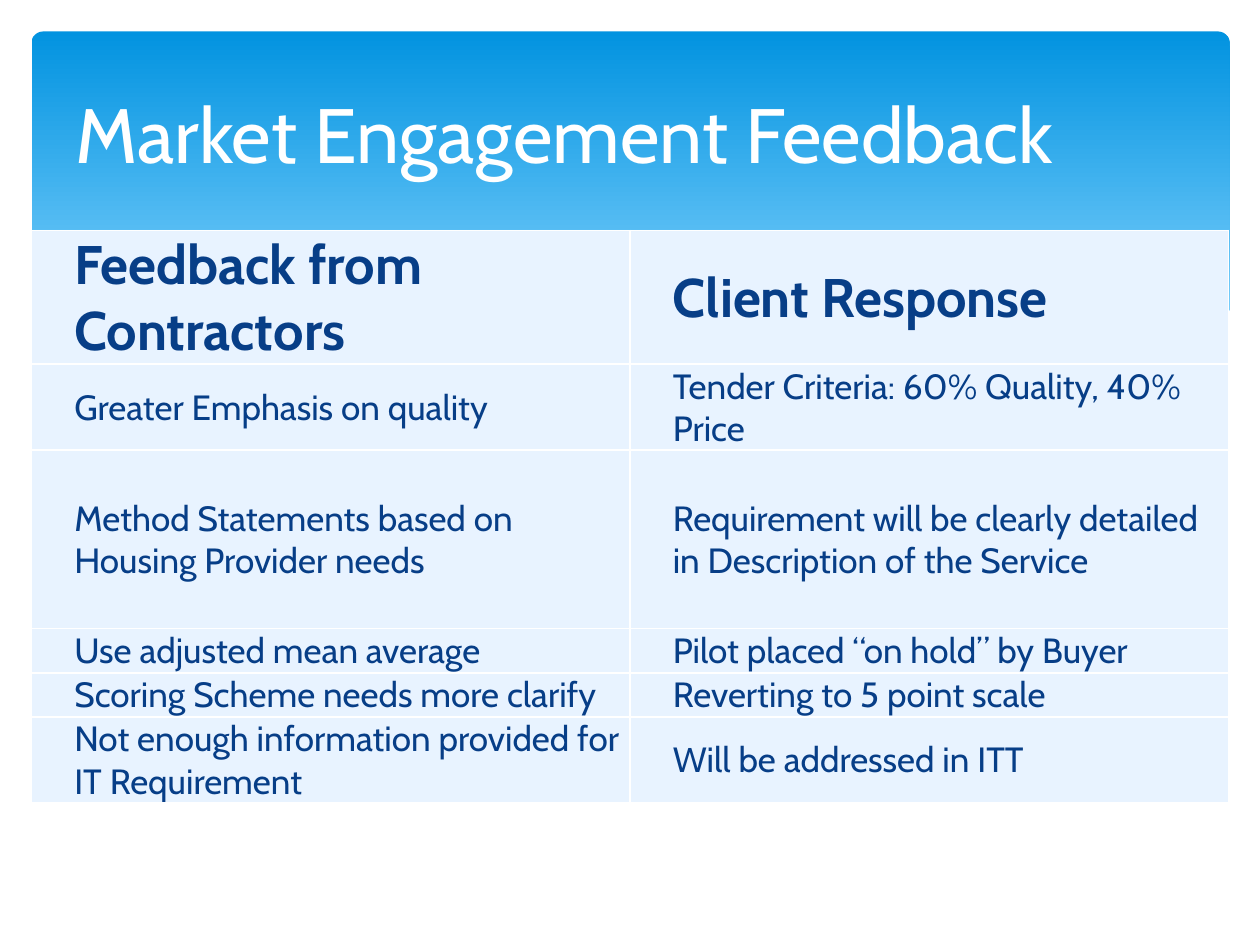
from pptx import Presentation, util as u
from pptx.dml.color import RGBColor
from pptx.enum import shapes, text
from pptx.oxml import parse_xml
from pptx.oxml.ns import nsdecls

COLORS = {
    "white": "FFFFFF",
    "sky_dark": "0293E0",
    "sky_light": "83D3FE",
    "navy": "073E87",
    "cell": "E8F3FF",
}
FONT = "Cabin"


def rgb(name):
    return RGBColor.from_string(COLORS[name])


class SlideBuilder:
    """Holds the style and the current slide."""

    def __init__(self, slide):
        self.s = slide

    def style(self, p, size, color, bold=False):
        f = p.font
        f.name, f.size, f.bold = FONT, u.Pt(size), bold
        f.color.rgb = rgb(color)

    def panel(self, x, y, w, h):
        sp = self.s.shapes.add_shape(
            shapes.MSO_SHAPE.ROUNDED_RECTANGLE, *map(u.Inches, (x, y, w, h)))
        sp.adjustments[0] = 0.034
        sp.shadow.inherit = False
        sp.line.fill.background()
        sp.fill.gradient()
        sp.fill.gradient_angle = 270
        stops = zip(sp.fill.gradient_stops, ("sky_dark", "sky_light"), (0, 0.9))
        for stop, color, position in stops:
            stop.color.rgb = rgb(color)
            stop.position = position

    def outline(self, points, color):
        pts = [(u.Inches(x), u.Inches(y)) for x, y in points]
        fb = self.s.shapes.build_freeform(*pts[0])
        fb.add_line_segments(pts[1:], close=True)
        sp = fb.convert_to_shape()
        sp.shadow.inherit = False
        sp.fill.solid()
        sp.fill.fore_color.rgb = rgb(color)
        sp.line.fill.background()

    def title(self, x, y, w, h, words):
        tf = self.s.shapes.add_textbox(*map(u.Inches, (x, y, w, h))).text_frame
        tf.word_wrap = True
        tf.vertical_anchor = text.MSO_ANCHOR.MIDDLE
        p = tf.paragraphs[0]
        p.text = words
        self.style(p, 44, "white")

    def cell(self, cell, words, heading):
        cell.text = words
        cell.vertical_anchor = text.MSO_ANCHOR.MIDDLE
        cell.margin_left = u.Inches(0.34)
        cell.margin_right = cell.margin_top = u.Inches(0.01)
        cell.margin_bottom = 0
        self.style(cell.text_frame.paragraphs[0], 31 if heading else 20,
                   "navy", heading)
        # Borders come before the fill in the cell properties
        tcPr = cell._tc.get_or_add_tcPr()
        for side in "LRTB":
            tcPr.append(parse_xml(
                f'<a:ln{side} w="12700" {nsdecls("a")}><a:solidFill>'
                f'<a:srgbClr val="{COLORS["white"]}"/></a:solidFill></a:ln{side}>'))
        cell.fill.solid()
        cell.fill.fore_color.rgb = rgb("cell")

    def table(self, x, y, w, heights, rows):
        frame = self.s.shapes.add_table(
            len(rows), len(rows[0]),
            *map(u.Inches, (x, y, w, sum(heights))))
        tbl = frame.table
        tbl.horz_banding = False
        for i, (height, row) in enumerate(zip(heights, rows)):
            tbl.rows[i].height = u.Inches(height)
            for j, words in enumerate(row):
                self.cell(tbl.cell(i, j), words, heading=i == 0)


ROWS = [
    ("Feedback from Contractors", "Client Response"),
    ("Greater Emphasis on quality", "Tender Criteria: 60% Quality, 40% Price"),
    ("Method Statements based on Housing Provider needs",
     "Requirement will be clearly detailed in Description of the Service"),
    ("Use adjusted mean average", "Pilot placed “on hold” by Buyer"),
    ("Scoring Scheme needs more clarify", "Reverting to 5 point scale"),
    ("Not enough information provided for IT Requirement",
     "Will be addressed in ITT"),
]
ROW_HEIGHTS = [1.06, 0.68, 1.42, 0.35, 0.35, 0.68]

# White wave that closes the header panel
WAVE = [(9.77, 2.46), (9.3, 2.62), (8.75, 2.73), (8.09, 2.77), (7.26, 2.72),
        (6.26, 2.58), (5.29, 2.39), (4.47, 2.2), (3.65, 2.02), (2.92, 1.9),
        (2.3, 1.85), (1.77, 1.84), (1.19, 1.87), (0.67, 1.97), (0.23, 2.13),
        (0.23, 3.29), (9.77, 3.29)]


def main():
    prs = Presentation()
    prs.slide_width, prs.slide_height = u.Inches(10), u.Inches(7.5)
    b = SlideBuilder(prs.slides.add_slide(prs.slide_layouts[6]))

    # Header
    b.panel(0.25, 0.25, 9.51, 2.7)
    b.outline(WAVE, "white")
    b.title(0.5, 0.37, 9, 1.37, "Market Engagement Feedback")

    # Feedback and responses
    b.table(0.25, 1.83, 9.5, ROW_HEIGHTS, ROWS)

    prs.save("out.pptx")


if __name__ == "__main__":
    main()
